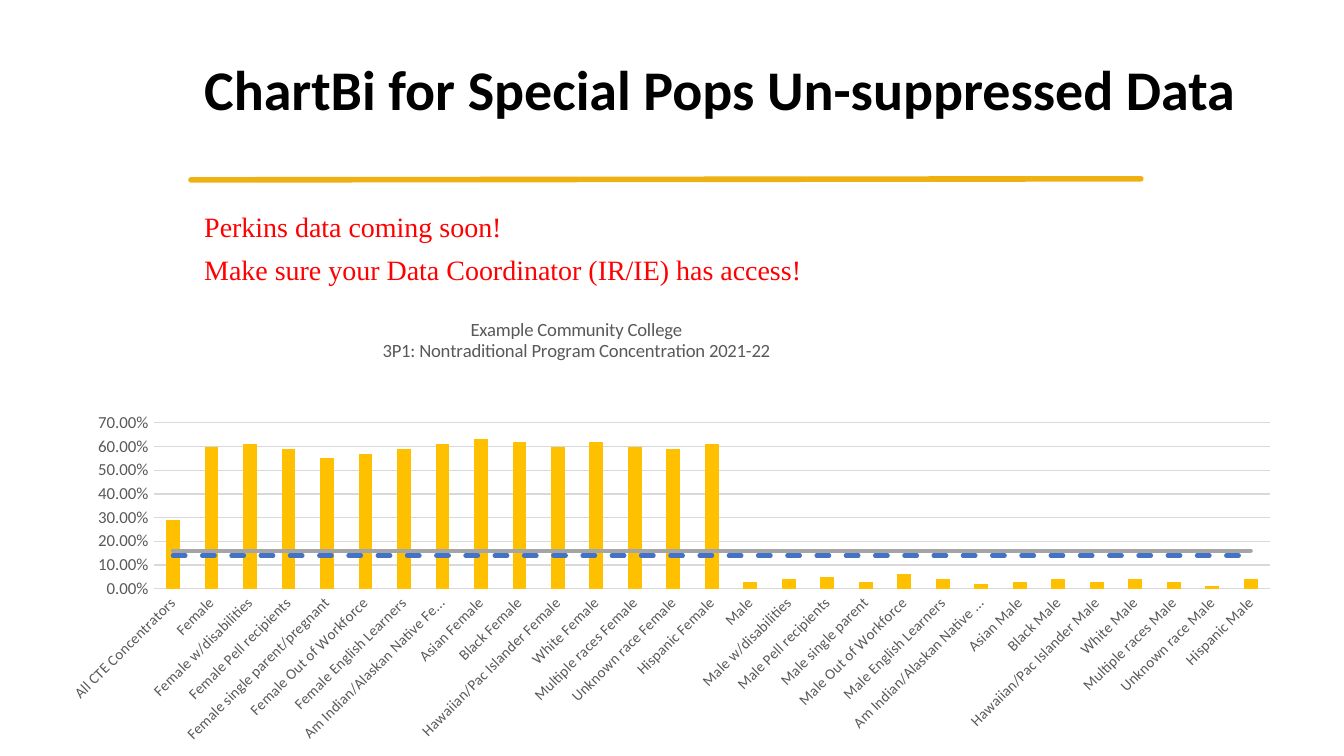
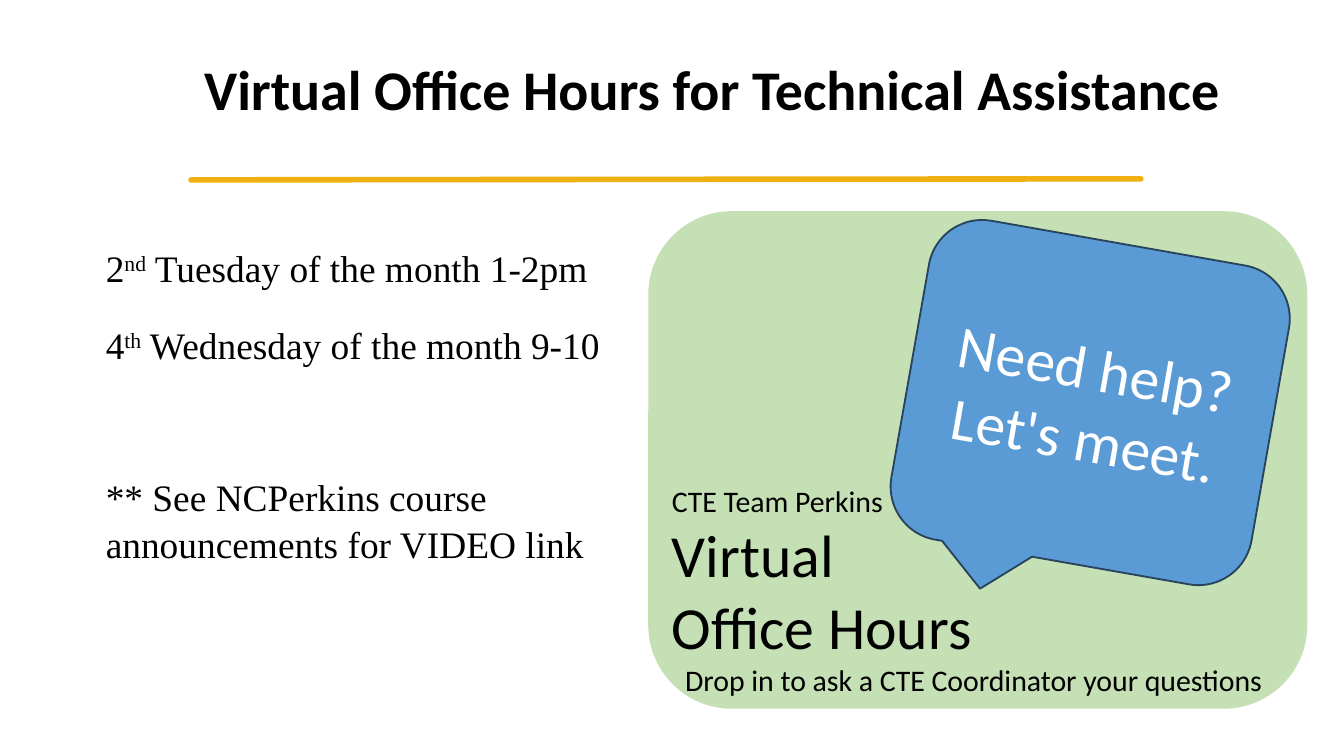
from typing import NamedTuple

from lxml import etree
from pptx import Presentation, util as u
from pptx.chart.data import CategoryChartData
from pptx.dml.color import RGBColor
from pptx.enum import chart as ch, dml, shapes, text
from pptx.oxml import parse_xml
from pptx.oxml.ns import nsdecls, qn

BLACK = RGBColor(0, 0, 0)
WHITE = RGBColor(255, 255, 255)
RED = RGBColor(255, 0, 0)
GOLD = RGBColor(0xEE, 0xB1, 0x11)
GREEN = RGBColor(0xC5, 0xE0, 0xB4)
BLUE = RGBColor(0x5B, 0x9B, 0xD5)
NAVY = RGBColor(0x28, 0x44, 0x5D)
GRAY = RGBColor(0x59, 0x59, 0x59)
GRID = RGBColor(0xD9, 0xD9, 0xD9)
AMBER = RGBColor(0xFF, 0xC0, 0x00)
DASH = RGBColor(0x44, 0x72, 0xC4)
SOLID = RGBColor(0xA5, 0xA5, 0xA5)
SANS, SERIF = "Calibri", "Times New Roman"


class Box(NamedTuple):
    """Left, top, width and height in centimetres."""
    x: float
    y: float
    w: float
    h: float

    def cm(self) -> list[u.Cm]:
        return [u.Cm(v) for v in self]


class Run(NamedTuple):
    text: str
    sup: bool = False


class Para(NamedTuple):
    runs: list[Run]
    size: float
    before: float = 0
    after: float = 0
    lines: float = 1
    indent: float = 0


class Look(NamedTuple):
    font: str = SANS
    color: RGBColor = BLACK
    bold: bool = False
    align: text.PP_ALIGN = text.PP_ALIGN.LEFT
    anchor: text.MSO_ANCHOR = text.MSO_ANCHOR.TOP


def write(frame, paras: list[Para], look: Look) -> None:
    frame.word_wrap = True
    frame.vertical_anchor = look.anchor
    for i, item in enumerate(paras):
        para = frame.add_paragraph() if i else frame.paragraphs[0]
        para.alignment = look.align
        para.line_spacing = item.lines
        para.space_before = u.Pt(item.before)
        para.space_after = u.Pt(item.after)
        if item.indent:
            para._p.get_or_add_pPr().set("marL", str(u.Cm(item.indent)))
        for part in item.runs:
            run = para.add_run()
            run.text = part.text
            run.font.name = look.font
            run.font.size = u.Pt(item.size)
            run.font.bold = look.bold
            run.font.color.rgb = look.color
            if part.sup:
                run._r.get_or_add_rPr().set("baseline", "30000")


def add_text(slide, box: Box, paras: list[Para], look: Look) -> None:
    write(slide.shapes.add_textbox(*box.cm()).text_frame, paras, look)


def add_shape(slide, kind: shapes.MSO_SHAPE, box: Box, fill: RGBColor, edge: RGBColor):
    shape = slide.shapes.add_shape(kind, *box.cm())
    shape.shadow.inherit = False
    shape.fill.solid()
    shape.fill.fore_color.rgb = fill
    shape.line.color.rgb = edge
    shape.line.width = u.Pt(1)
    return shape


def add_slide(deck, title: str):
    """Add a blank slide with the gold rule and a title."""
    slide = deck.slides.add_slide(deck.slide_layouts[6])
    rule = slide.shapes.add_connector(
        shapes.MSO_CONNECTOR.STRAIGHT, u.Cm(3.61), u.Cm(3.4), u.Cm(21.56), u.Cm(3.38))
    rule.line.color.rgb = GOLD
    rule.line.width = u.Pt(3)
    rule.line._get_or_add_ln().set("cap", "rnd")
    etree.SubElement(rule._element.spPr, qn("a:effectLst"))
    add_text(slide, Box(3.61, 0.36, 20.45, 2.77), [Para([Run(title)], 30, lines=0.9)],
             Look(bold=True, anchor=text.MSO_ANCHOR.MIDDLE))
    return slide


GROUPS = ["{}", "{} w/disabilities", "{} Pell recipients", "{} single parent",
          "{} Out of Workforce", "{} English Learners", "Am Indian/Alaskan Native {}",
          "Asian {}", "Black {}", "Hawaiian/Pac Islander {}", "White {}",
          "Multiple races {}", "Unknown race {}", "Hispanic {}"]
RATES = [0.29,
         0.6, 0.61, 0.59, 0.55, 0.57, 0.59, 0.61, 0.63, 0.62, 0.6, 0.62, 0.6, 0.59, 0.61,
         0.03, 0.04, 0.05, 0.03, 0.06, 0.04, 0.02, 0.03, 0.04, 0.03, 0.04, 0.03, 0.01, 0.04]


def split_lines(chart) -> None:
    """Move every series but the first from the bars to a line plot."""
    bars = chart._chartSpace.find(".//" + qn("c:barChart"))
    lines = parse_xml(f'<c:lineChart {nsdecls("c")}><c:grouping val="standard"/>'
                      '<c:varyColors val="0"/></c:lineChart>')
    for ser in bars.findall(qn("c:ser"))[1:]:
        for flag in ser.findall(qn("c:invertIfNegative")):
            ser.remove(flag)
        lines.append(ser)
    etree.SubElement(lines, qn("c:marker")).set("val", "1")
    for axis in bars.findall(qn("c:axId")):
        etree.SubElement(lines, qn("c:axId")).set("val", axis.get("val"))
    bars.addnext(lines)


def place_plot(chart, x: float, y: float, w: float, h: float) -> None:
    """Fix the inner plot area, in fractions of the chart."""
    area = chart._chartSpace.find(".//" + qn("c:plotArea"))
    for old in area.findall(qn("c:layout")):
        area.remove(old)
    sizes = "".join(f'<c:{k} val="{v}"/>' for k, v in zip("xywh", (x, y, w, h)))
    area.insert(0, parse_xml(
        f'<c:layout {nsdecls("c")}><c:manualLayout><c:layoutTarget val="inner"/>'
        f'<c:xMode val="edge"/><c:yMode val="edge"/>{sizes}</c:manualLayout></c:layout>'))


def style_font(font, size: float) -> None:
    font.name = SANS
    font.size = u.Pt(size)
    font.bold = False
    font.color.rgb = GRAY


def style_axes(chart) -> None:
    cats, vals = chart.category_axis, chart.value_axis
    for axis, size in ((cats, 8), (vals, 9)):
        axis.major_tick_mark = axis.minor_tick_mark = ch.XL_TICK_MARK.NONE
        style_font(axis.tick_labels.font, size)
    cats.has_major_gridlines = False
    cats._element.find(qn("c:txPr")).find(qn("a:bodyPr")).set("rot", "-2700000")
    vals.minimum_scale, vals.maximum_scale, vals.major_unit = 0, 0.7, 0.1
    vals.tick_labels.number_format = "0.00%"
    vals.tick_labels.number_format_is_linked = False
    vals.format.line.fill.background()
    for line in (cats.format.line, vals.major_gridlines.format.line):
        line.color.rgb = GRID
        line.width = u.Pt(0.75)


def add_rates(slide, box: Box) -> None:
    data = CategoryChartData(number_format="0.00%")
    names = [g.format(sex) for sex in ("Female", "Male") for g in GROUPS]
    names[3] += "/pregnant"
    data.categories = ["All CTE Concentrators"] + names
    rows = (RATES, [0.14] * len(RATES), [0.16] * len(RATES))
    for i, row in enumerate(rows, 1):
        data.add_series(f"Series {i}", row)
    chart = slide.shapes.add_chart(
        ch.XL_CHART_TYPE.COLUMN_CLUSTERED, *box.cm(), data).chart
    chart.font.name = SANS
    chart.font.size = u.Pt(10)
    chart.has_legend = False
    chart.has_title = True
    frame = chart.chart_title.text_frame
    heads = ("Example Community College", "3P1: Nontraditional Program Concentration 2021-22")
    for i, head in enumerate(heads):
        para = frame.add_paragraph() if i else frame.paragraphs[0]
        run = para.add_run()
        run.text = head
        style_font(run.font, 10)
    split_lines(chart)
    place_plot(chart, 0.215, 0.281, 0.753, 0.37)
    style_axes(chart)
    bars, lines = chart.plots
    bars.gap_width = 182
    bars.vary_by_categories = False
    fill = bars.series[0].format.fill
    fill.solid()
    fill.fore_color.rgb = AMBER
    styles = ((DASH, dml.MSO_LINE.DASH), (SOLID, dml.MSO_LINE.SOLID))
    for ser, (color, dash) in zip(lines.series, styles):
        ser.smooth = False
        ser.marker.style = ch.XL_MARKER_STYLE.NONE
        line = ser.format.line
        line.color.rgb = color
        line.width = u.Pt(2.25)
        line.dash_style = dash
        line._get_or_add_ln().set("cap", "rnd")


def data_slide(deck) -> None:
    slide = add_slide(deck, "ChartBi for Special Pops Un-suppressed Data")
    notes = ("Perkins data coming soon!", "Make sure your Data Coordinator (IR/IE) has access!")
    add_text(slide, Box(3.61, 3.81, 20.04, 9.58),
             [Para([Run(t)], 15, before=4.2 if i else 0, lines=1.05)
              for i, t in enumerate(notes)], Look(SERIF, RED))
    add_rates(slide, Box(-3.12, 5.61, 28.02, 8.48))


def hours_slide(deck) -> None:
    slide = add_slide(deck, "Virtual Office Hours for Technical Assistance")
    times = [
        ([Run("2"), Run("nd", True), Run(" Tuesday of the month 1-2pm")], 0),
        ([Run("4"), Run("th", True), Run(" Wednesday of the month 9-10")], 4),
        ([Run("** See NCPerkins course announcements for VIDEO link")], 44),
    ]
    add_text(slide, Box(1.75, 4.47, 10.36, 8.97),
             [Para(runs, 20, gap, 12, 1.05) for runs, gap in times], Look(SERIF))
    add_shape(slide, shapes.MSO_SHAPE.ROUNDED_RECTANGLE,
              Box(12.27, 4.01, 12.42, 9.37), GREEN, GREEN)
    add_text(slide, Box(12.45, 8.99, 11.79, 4.37), [
        Para([Run("CTE Team Perkins")], 16),
        Para([Run("Virtual")], 32),
        Para([Run("Office Hours")], 32),
        Para([Run("Drop in to ask a CTE Coordinator your questions")], 16, indent=0.25),
    ], Look())
    call = add_shape(slide, shapes.MSO_SHAPE.ROUNDED_RECTANGULAR_CALLOUT,
                     Box(17.15, 4.55, 6.91, 6.12), BLUE, NAVY)
    call.rotation = 10
    write(call.text_frame, [Para([Run(t)], 32) for t in ("Need help?", "Let's meet.")],
          Look(color=WHITE, align=text.PP_ALIGN.CENTER, anchor=text.MSO_ANCHOR.MIDDLE))


def main() -> None:
    deck = Presentation()
    deck.slide_width, deck.slide_height = u.Cm(25.4), u.Cm(14.29)
    data_slide(deck)
    hours_slide(deck)
    deck.save("out.pptx")


if __name__ == "__main__":
    main()
